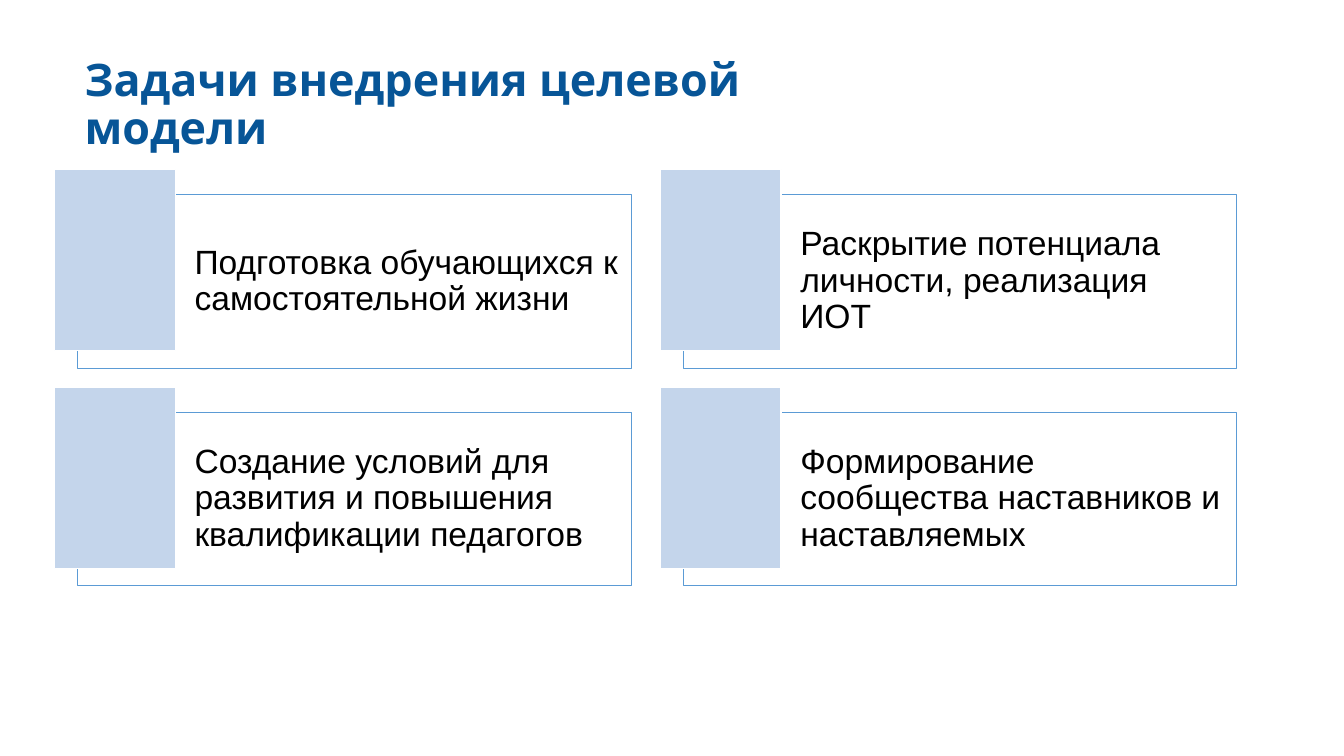
from lxml.etree import SubElement
from pptx import Presentation
from pptx.dml.color import RGBColor
from pptx.enum.shapes import MSO_SHAPE
from pptx.enum.text import MSO_ANCHOR, PP_ALIGN
from pptx.oxml.ns import qn
from pptx.util import Pt

COLORS = {"title": "075597", "text": "000000", "panel": "FFFFFF",
          "border": "5B9BD5", "tile": "C4D5EB", "tile_edge": "FFFFFF"}

TASKS = [
    "Подготовка обучающихся к самостоятельной жизни",
    "Раскрытие потенциала личности, реализация ИОТ",
    "Создание условий для развития и повышения квалификации педагогов",
    "Формирование сообщества наставников и наставляемых",
]

# Card grid, in points
COLUMNS = 2
GRID_LEFT, GRID_TOP = 55.44, 138.96
STEP_X, STEP_Y = 432.72, 155.52
PANEL_W, PANEL_H = 395.28, 123.84
TILE_W, TILE_H = 86.4, 129.6
TILE_DX, TILE_DY = -16.56, -18


class TaskSlide:
    def __init__(self, slide):
        self.shapes = slide.shapes

    def color(self, name):
        return RGBColor.from_string(COLORS[name])

    def add_text(self, frame, text, font, size, color, bold=False):
        frame.word_wrap = True
        frame.vertical_anchor = MSO_ANCHOR.MIDDLE
        paragraph = frame.paragraphs[0]
        paragraph.alignment = PP_ALIGN.LEFT
        paragraph.line_spacing = 0.9
        run = paragraph.add_run()
        run.text = text
        run.font.name = font
        run.font.size = Pt(size)
        run.font.bold = bold
        run.font.color.rgb = self.color(color)

    def title(self, text, left, top, width, height):
        box = self.shapes.add_textbox(Pt(left), Pt(top), Pt(width), Pt(height))
        self.add_text(box.text_frame, text, "Karla", 32, "title", bold=True)

    def rectangle(self, left, top, width, height, fill, line, line_width):
        rect = self.shapes.add_shape(MSO_SHAPE.RECTANGLE, Pt(left), Pt(top),
                                     Pt(width), Pt(height))
        rect.shadow.inherit = False
        rect.fill.solid()
        rect.fill.fore_color.rgb = self.color(fill)
        rect.line.color.rgb = self.color(line)
        rect.line.width = Pt(line_width)
        return rect

    def card(self, text, left, top):
        # Translucent panel with the task text
        panel = self.rectangle(left, top, PANEL_W, PANEL_H, "panel", "border", 0.5)
        fill_color = panel.element.spPr.find(qn("a:solidFill"))[0]
        SubElement(fill_color, qn("a:alpha"), val="40000")
        frame = panel.text_frame
        frame.margin_left = Pt(83.52)
        frame.margin_top = frame.margin_right = frame.margin_bottom = Pt(7.2)
        self.add_text(frame, text, "Arial", 24, "text")
        # Tile over the panel's upper left corner
        self.rectangle(left + TILE_DX, top + TILE_DY, TILE_W, TILE_H,
                       "tile", "tile_edge", 1)


def main():
    deck = Presentation()
    deck.slide_width, deck.slide_height = Pt(960), Pt(540)
    page = TaskSlide(deck.slides.add_slide(deck.slide_layouts[6]))

    # Heading
    page.title("Задачи внедрения целевой модели", 53.28, 41.76, 599.04, 67.68)

    # Task cards
    for index, task in enumerate(TASKS):
        row, column = divmod(index, COLUMNS)
        page.card(task, GRID_LEFT + column * STEP_X, GRID_TOP + row * STEP_Y)

    deck.save("out.pptx")


if __name__ == "__main__":
    main()
